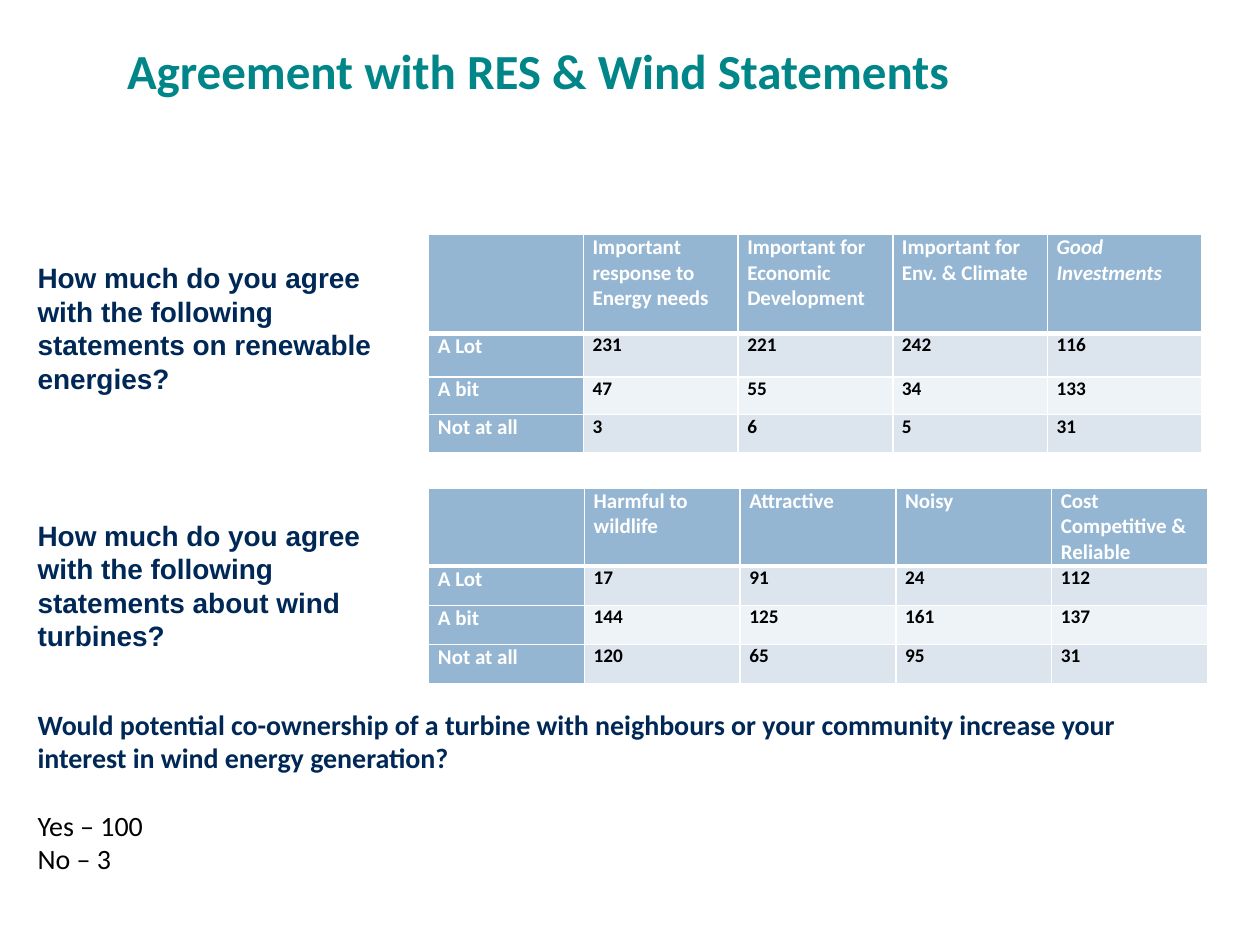
from dataclasses import dataclass

from lxml.etree import SubElement
from pptx import Presentation
from pptx.dml.color import RGBColor
from pptx.enum.text import MSO_ANCHOR
from pptx.oxml.ns import qn
from pptx.util import Pt


@dataclass(frozen=True)
class Theme:
    teal: str = "008688"
    navy: str = "002857"
    black: str = "000000"
    white: str = "FFFFFF"
    header: str = "94B6D2"
    bands: tuple = ("DCE5EE", "EEF3F7")
    title_size: float = 28
    body_size: float = 16
    label_size: float = 12
    value_size: float = 11
    body_font: str = "Calibri"
    question_font: str = "Arial"


THEME = Theme()

RENEWABLES = [
    ["", "Important response to Energy needs", "Important for Economic Development",
     "Important for Env. & Climate", "Good Investments"],
    ["A Lot", "231", "221", "242", "116"],
    ["A bit", "47", "55", "34", "133"],
    ["Not at all", "3", "6", "5", "31"],
]
TURBINES = [
    ["", "Harmful to wildlife", "Attractive", "Noisy", "Cost Competitive & Reliable"],
    ["A Lot", "17", "91", "24", "112"],
    ["A bit", "144", "125", "161", "137"],
    ["Not at all", "120", "65", "95", "31"],
]


def write(para, text, *, size=THEME.body_size, color=THEME.navy, font=THEME.body_font,
          bold=True, italic=False, before=None, line=None):
    if before is not None:
        para.space_before = Pt(before)
    if line is not None:
        para.line_spacing = Pt(line)
    if not text:
        para.font.size = Pt(size)
        return
    span = para.add_run()
    span.text = text
    span.font.size = Pt(size)
    span.font.name = font
    span.font.bold = bold
    span.font.italic = italic
    span.font.color.rgb = RGBColor.from_string(color)


def add_box(page, left, top, width, height, anchor=MSO_ANCHOR.TOP):
    box = page.shapes.add_textbox(Pt(left), Pt(top), Pt(width), Pt(height))
    frame = box.text_frame
    frame.word_wrap = True
    frame.vertical_anchor = anchor
    return frame


def set_borders(cell, **widths):
    properties = cell._tc.get_or_add_tcPr()
    for position, side in enumerate(("L", "R", "T", "B")):
        line = properties.makeelement(qn(f"a:ln{side}"), {"w": str(Pt(widths.get(side, 1)))})
        fill = SubElement(line, qn("a:solidFill"))
        SubElement(fill, qn("a:srgbClr"), val=THEME.white)
        properties.insert(position, line)


def add_answer_table(page, rows, left, top, column_width, heights, italic_label=None):
    columns = len(rows[0])
    table = page.shapes.add_table(len(rows), columns, Pt(left), Pt(top),
                                  Pt(column_width * columns), Pt(sum(heights))).table
    for column in table.columns:
        column.width = Pt(column_width)
    for row_index, (row, height) in enumerate(zip(rows, heights)):
        table.rows[row_index].height = Pt(height)
        for column_index, text in enumerate(row):
            cell = table.cell(row_index, column_index)
            is_label = row_index == 0 or column_index == 0
            cell.margin_left = cell.margin_right = Pt(5.3)
            cell.margin_top = cell.margin_bottom = Pt(0)
            cell.fill.solid()
            band = THEME.bands[(row_index - 1) % 2]
            cell.fill.fore_color.rgb = RGBColor.from_string(THEME.header if is_label else band)
            set_borders(cell, T=3 if row_index == 1 else 1, B=3 if row_index == 0 else 1)
            write(cell.text_frame.paragraphs[0], text,
                  size=THEME.label_size if is_label else THEME.value_size,
                  color=THEME.white if is_label else THEME.black,
                  italic=text == italic_label)


def add_question(page, text, top, width):
    frame = add_box(page, 14.4, top, width, 85)
    write(frame.paragraphs[0], text, font=THEME.question_font)


def add_ownership_answers(page):
    frame = add_box(page, 14.4, 400.5, 636.5, 104.5)
    write(frame.paragraphs[0], "Would potential co-ownership of a turbine with neighbours "
          "or your community increase your interest in wind energy generation?")
    write(frame.add_paragraph(), "Yes – 100", color=THEME.black, bold=False, before=19.5)
    write(frame.add_paragraph(), "No – 3", color=THEME.black, bold=False)


def main():
    deck = Presentation()
    deck.slide_width, deck.slide_height = Pt(720), Pt(540)
    page = deck.slides.add_slide(deck.slide_layouts[6])

    title = add_box(page, 65.5, 0, 646.5, 83, MSO_ANCHOR.MIDDLE)
    write(title.paragraphs[0], "Agreement with RES & Wind Statements",
          size=THEME.title_size, color=THEME.teal, line=31)
    add_answer_table(page, RENEWABLES, 245, 134, 88.4, [56.5, 25, 21.5, 21.5],
                     italic_label="Good Investments")
    add_answer_table(page, TURBINES, 245, 279, 89, [44.5, 22.4, 22.4, 22.4])
    add_question(page, "How much do you agree with the following statements on "
                 "renewable energies?", 145.5, 230.5)
    add_question(page, "How much do you agree with the following statements about "
                 "wind turbines?", 292.5, 204)
    add_ownership_answers(page)

    deck.save("out.pptx")


if __name__ == "__main__":
    main()
